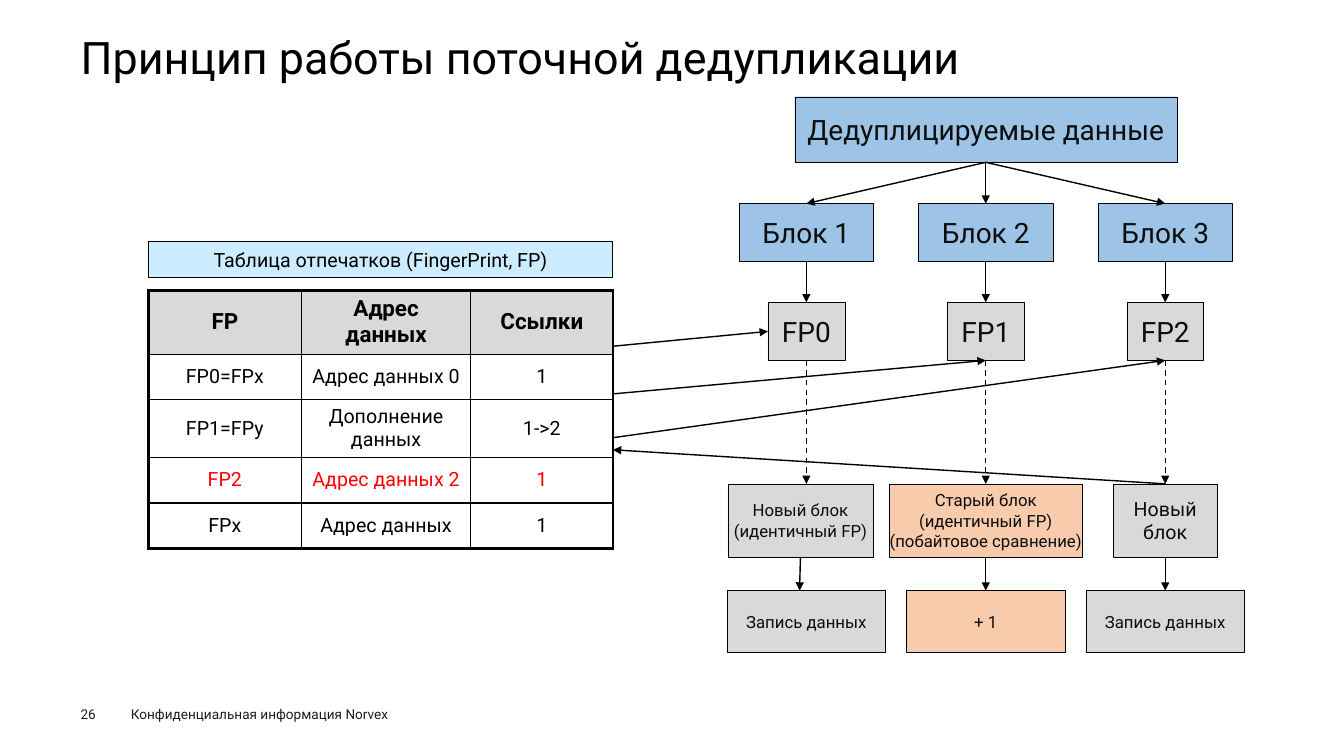
from dataclasses import dataclass
from typing import Union

from lxml.etree import SubElement
from pptx import Presentation
from pptx.dml.color import RGBColor
from pptx.enum.dml import MSO_LINE
from pptx.enum.shapes import MSO_CONNECTOR, MSO_SHAPE
from pptx.enum.text import MSO_ANCHOR, PP_ALIGN
from pptx.oxml.ns import qn
from pptx.shapes.autoshape import Shape
from pptx.slide import Slide
from pptx.table import _Cell
from pptx.text.text import TextFrame
from pptx.util import Inches, Length, Pt

# All places and sizes are percentages of the slide's width and height.
SLIDE_WIDTH, SLIDE_HEIGHT = Inches(13.33), Inches(7.5)
FONT = "Roboto"
BLACK, INK, FOOTER_INK, RED, WHITE = "000000", "0D0D0D", "1D1D1B", "FF0000", "FFFFFF"
BLUE, SKY, GRAY, PEACH = "9DC3E6", "CCECFF", "D9D9D9", "F8CBAD"
TOP, LEFT, BOTTOM = 0, 1, 2

FLOW_COLUMNS = [60 + 13.35 * index for index in range(3)]
TABLE_LEFT, TABLE_WIDTH = 11.03, 34.58
TABLE_RIGHT = TABLE_LEFT + TABLE_WIDTH


@dataclass(frozen=True)
class Band:
    """A horizontal row of the flow diagram."""
    top: float
    height: float


@dataclass(frozen=True)
class Box:
    label: str
    center: float
    width: float
    band: Band
    fill: str
    size: float = 20
    side_inset: float = 0.1
    outline: float = 0.25
    ink: str = INK


@dataclass(frozen=True)
class Caption:
    text: str
    left: float
    top: float
    width: float
    height: float
    size: float
    ink: str
    inset: bool = False
    line_spacing: float = 1.0


@dataclass(frozen=True)
class Point:
    x: float
    y: float


@dataclass(frozen=True)
class Joint:
    """The middle of one side of a box."""
    box: Shape
    side: int


End = Union[Point, Joint]

DATA = Band(12.8, 8.67)
BLOCKS = Band(26.93, 7.67)
PRINTS = Band(40, 7.67)
VERDICTS = Band(64, 9.67)
ACTIONS = Band(78.13, 8.2)
TABLE_TITLE = Band(31.93, 4.8)

CAPTIONS = [
    Caption("Принцип работы поточной дедупликации", 6, 4.67, 88, 7.2, 32, BLACK,
            line_spacing=0.9),
    Caption("26", 6, 93.33, 4.1, 2.13, 9.7, FOOTER_INK),
    Caption("Конфиденциальная информация Norvex", 9, 92.67, 22.4, 3.47, 9.7, FOOTER_INK,
            inset=True),
]
FINGERPRINTS = [
    ("FP", "Адрес данных", "Ссылки"),
    ("FP0=FPx", "Адрес данных 0", "1"),
    ("FP1=FPy", "Дополнение данных", "1->2"),
    ("FP2", "Адрес данных 2", "1"),
    ("FPx", "Адрес данных", "1"),
]
NEW_RECORD = 3
TABLE_TOP = 38.4
TABLE_COLUMNS = [11.4, 12.6, 10.58]
TABLE_ROWS = [8.2, 6.05, 7.6, 6.05, 6.05]


def across(share: float) -> Length:
    return Length(round(SLIDE_WIDTH * share / 100))


def down(share: float) -> Length:
    return Length(round(SLIDE_HEIGHT * share / 100))


def color(code: str) -> RGBColor:
    return RGBColor.from_string(code)


def style_text(frame: TextFrame, size: float, ink: str, align: PP_ALIGN,
               bold: bool = False, line_spacing: float = 1.0) -> None:
    for paragraph in frame.paragraphs:
        paragraph.alignment = align
        paragraph.line_spacing = line_spacing
        for run in paragraph.runs:
            run.font.name = FONT
            run.font.size = Pt(size)
            run.font.bold = bold
            run.font.color.rgb = color(ink)


def add_caption(slide: Slide, caption: Caption) -> None:
    frame = slide.shapes.add_textbox(across(caption.left), down(caption.top),
                                     across(caption.width), down(caption.height)).text_frame
    frame.word_wrap = True
    if not caption.inset:
        frame.margin_left = frame.margin_right = 0
        frame.margin_top = frame.margin_bottom = 0
    frame.text = caption.text
    style_text(frame, caption.size, caption.ink, PP_ALIGN.LEFT,
               line_spacing=caption.line_spacing)


def add_box(slide: Slide, box: Box) -> Shape:
    shape = slide.shapes.add_shape(
        MSO_SHAPE.RECTANGLE, across(box.center - box.width / 2), down(box.band.top),
        across(box.width), down(box.band.height))
    shape.shadow.inherit = False
    shape.fill.solid()
    shape.fill.fore_color.rgb = color(box.fill)
    shape.line.color.rgb = color(BLACK)
    shape.line.width = Pt(box.outline)
    frame = shape.text_frame
    frame.word_wrap = True
    frame.vertical_anchor = MSO_ANCHOR.MIDDLE
    frame.margin_left = frame.margin_right = Inches(box.side_inset)
    frame.text = box.label
    style_text(frame, box.size, box.ink, PP_ALIGN.CENTER)
    return shape


def add_arrow(slide: Slide, start: End, finish: End, dashed: bool = False) -> None:
    arrow = slide.shapes.add_connector(MSO_CONNECTOR.STRAIGHT, 0, 0, 0, 0)
    if isinstance(start, Joint):
        arrow.begin_connect(start.box, start.side)
    else:
        arrow.begin_x, arrow.begin_y = across(start.x), down(start.y)
    if isinstance(finish, Joint):
        arrow.end_connect(finish.box, finish.side)
    else:
        arrow.end_x, arrow.end_y = across(finish.x), down(finish.y)
    arrow.line.color.rgb = color(BLACK)
    arrow.line.width = Pt(1)
    if dashed:
        arrow.line.dash_style = MSO_LINE.DASH
    SubElement(arrow.line._get_or_add_ln(), qn("a:tailEnd"), type="triangle")
    SubElement(arrow._element.spPr, qn("a:effectLst"))


def set_borders(cell: _Cell, outer_sides: dict[str, bool]) -> None:
    """Draw thick lines on the table's outer sides and thin ones inside."""
    properties = cell._tc.get_or_add_tcPr()
    for index, (side, outer) in enumerate(outer_sides.items()):
        line = SubElement(properties, qn(f"a:{side}"), w=str(Pt(2.25 if outer else 1)))
        fill = SubElement(line, qn("a:solidFill"))
        SubElement(fill, qn("a:srgbClr"), val=BLACK)
        properties.insert(index, line)


def add_fingerprint_table(slide: Slide) -> None:
    last_row, last_column = len(TABLE_ROWS) - 1, len(TABLE_COLUMNS) - 1
    table = slide.shapes.add_table(
        len(TABLE_ROWS), len(TABLE_COLUMNS), across(TABLE_LEFT), down(TABLE_TOP),
        across(TABLE_WIDTH), down(sum(TABLE_ROWS))).table
    table.first_row = table.horz_banding = False
    for column, width in zip(table.columns, TABLE_COLUMNS):
        column.width = across(width)
    for r, (height, record) in enumerate(zip(TABLE_ROWS, FINGERPRINTS)):
        table.rows[r].height = down(height)
        header = r == 0
        for c, value in enumerate(record):
            cell = table.cell(r, c)
            cell.text_frame.text = value
            cell.vertical_anchor = MSO_ANCHOR.MIDDLE
            cell.fill.solid()
            cell.fill.fore_color.rgb = color(GRAY if header else WHITE)
            style_text(cell.text_frame, 16 if header else 14,
                       RED if r == NEW_RECORD else BLACK, PP_ALIGN.CENTER, header)
            set_borders(cell, {"lnL": c == 0, "lnR": c == last_column,
                               "lnT": header, "lnB": r == last_row})


def add_flow(slide: Slide) -> None:
    data = add_box(slide, Box("Дедуплицируемые данные", FLOW_COLUMNS[1], 28.43, DATA, BLUE))
    blocks = [add_box(slide, Box(f"Блок {n}", x, 10, BLOCKS, BLUE))
              for n, x in enumerate(FLOW_COLUMNS, 1)]
    prints = [add_box(slide, Box(f"FP{n}", x, 5.72, PRINTS, GRAY))
              for n, x in enumerate(FLOW_COLUMNS)]
    verdicts = [add_box(slide, box) for box in (
        Box("Новый блок\n(идентичный FP)", 59.56, 10.8, VERDICTS, GRAY, 12, 0),
        Box("Старый блок\n(идентичный FP)\n(побайтовое сравнение)", FLOW_COLUMNS[1], 14.4,
            VERDICTS, PEACH, 12, 0),
        Box("Новый блок", FLOW_COLUMNS[2], 7.68, VERDICTS, GRAY, 14))]
    outcomes = [("Запись данных", GRAY), ("+ 1", PEACH), ("Запись данных", GRAY)]
    actions = [add_box(slide, Box(label, x, 11.8, ACTIONS, fill, 12))
               for x, (label, fill) in zip(FLOW_COLUMNS, outcomes)]

    for n, (block, fp, verdict, action) in enumerate(zip(blocks, prints, verdicts, actions)):
        off_center = n == 0
        add_arrow(slide, Joint(data, BOTTOM), Joint(block, TOP))
        add_arrow(slide, Joint(block, BOTTOM), Joint(fp, TOP))
        add_arrow(slide, Joint(fp, BOTTOM),
                  Point(FLOW_COLUMNS[0], VERDICTS.top) if off_center else Joint(verdict, TOP),
                  dashed=True)
        add_arrow(slide, Joint(verdict, BOTTOM),
                  Point(59.49, ACTIONS.top) if off_center else Joint(action, TOP))

    for y, fp, side in zip((45.8, 52.1, 57.9), prints, (LEFT, BOTTOM, BOTTOM)):
        add_arrow(slide, Point(TABLE_RIGHT, y), Joint(fp, side))
    add_arrow(slide, Joint(verdicts[2], TOP), Point(TABLE_RIGHT, 59.5))


def main() -> None:
    deck = Presentation()
    deck.slide_width, deck.slide_height = SLIDE_WIDTH, SLIDE_HEIGHT
    slide = deck.slides.add_slide(deck.slide_layouts[6])
    for caption in CAPTIONS:
        add_caption(slide, caption)
    add_fingerprint_table(slide)
    add_flow(slide)
    add_box(slide, Box("Таблица отпечатков (FingerPrint, FP)", TABLE_LEFT + TABLE_WIDTH / 2,
                       TABLE_WIDTH, TABLE_TITLE, SKY, 14, outline=0.75, ink=BLACK))
    deck.save("out.pptx")


if __name__ == "__main__":
    main()
